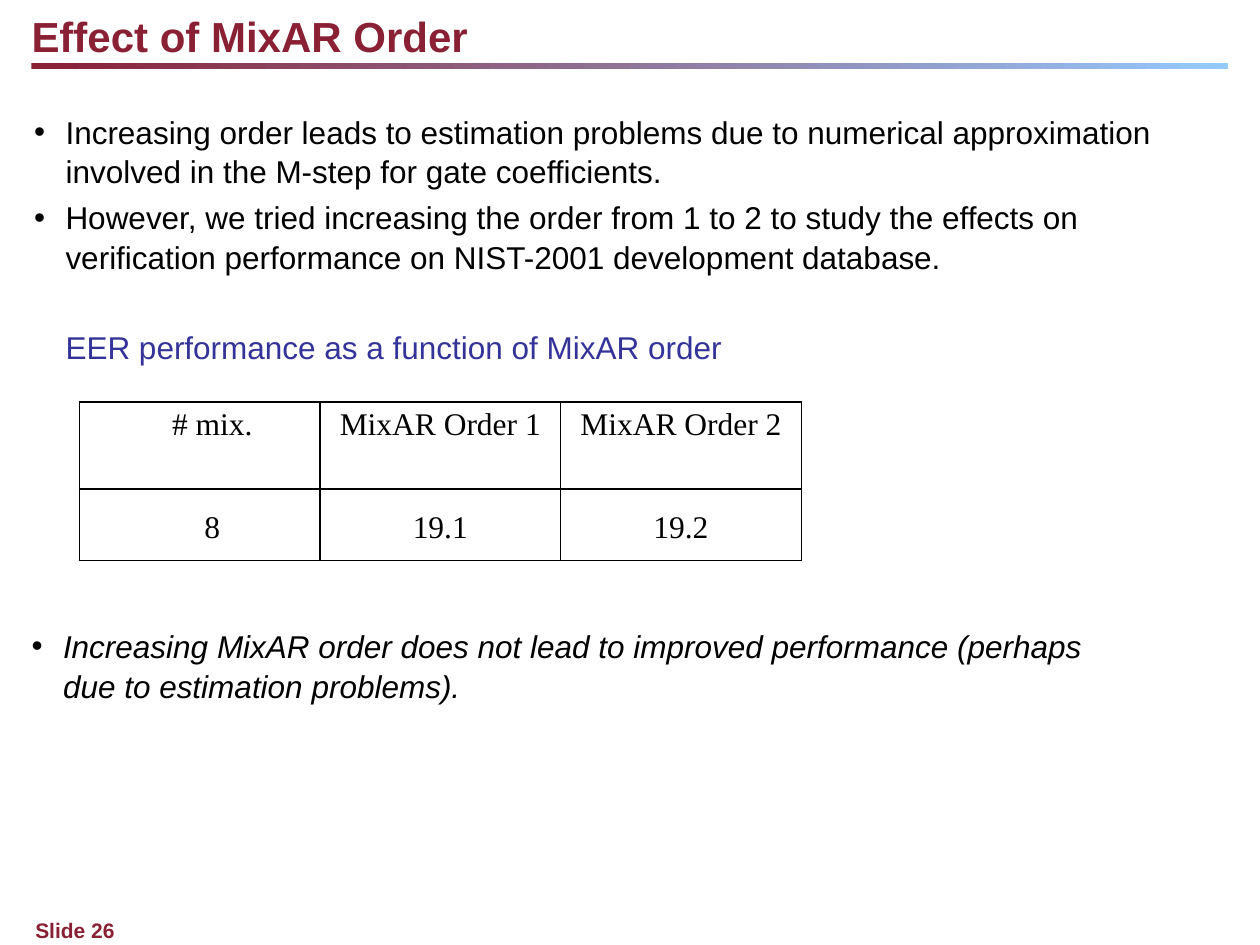
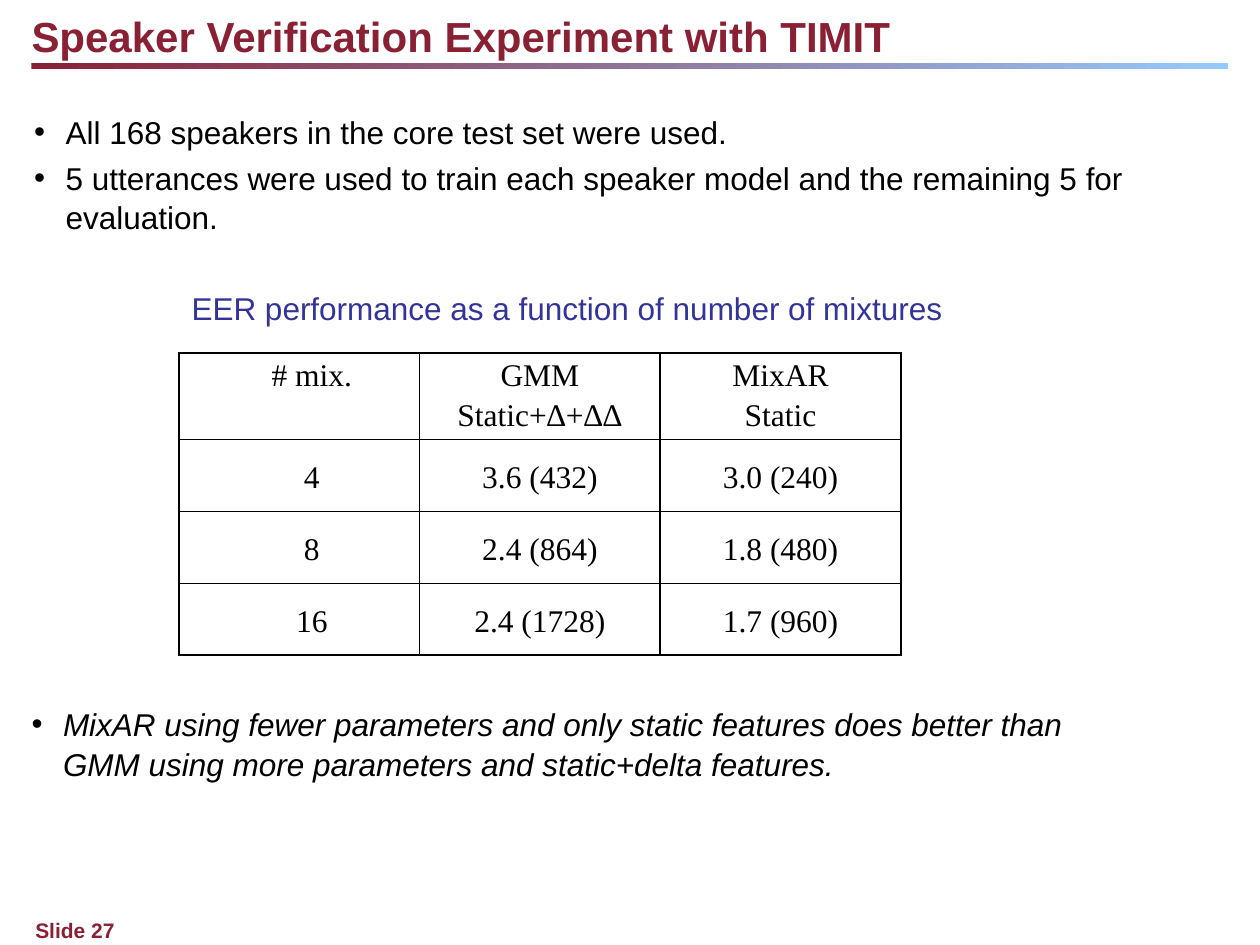
from lxml import etree
from pptx import Presentation
from pptx import util as u
from pptx.dml.color import RGBColor
from pptx.enum import shapes, text as t
from pptx.oxml import ns

MAROON, SKY, INDIGO, BLACK = "892034", "95CAFF", "333399", "000000"
SANS, SERIF = "Arial", "Times New Roman"
COLUMN_WIDTH, HEADER_HEIGHT, ROW_HEIGHT = 1.91, 0.69, 0.57
CAPTION_GAP = 28.8


def colour(hex_code):
    return RGBColor.from_string(hex_code)


def place(box, left, top, width, height):
    box.left, box.top = u.Inches(left), u.Inches(top)
    box.width, box.height = u.Inches(width), u.Inches(height)


def write(para, text, size=18, font=SANS, ink=BLACK, bold=False, italic=False,
          align=t.PP_ALIGN.LEFT, before=0, spacing=1.05, margin=0, indent=0,
          bullet=None):
    para.text = text
    para.alignment = align
    para.space_before = u.Pt(before)
    para.line_spacing = spacing
    properties = para._p.get_or_add_pPr()
    properties.set("marL", str(u.Inches(margin)))
    properties.set("indent", str(u.Inches(indent)))
    mark = etree.SubElement(properties, ns.qn("a:buChar" if bullet else "a:buNone"))
    if bullet:
        mark.set("char", bullet)
    for span in para.runs:
        span.font.name, span.font.size = font, u.Pt(size)
        span.font.bold, span.font.italic = bold, italic
        span.font.color.rgb = colour(ink)


def prepare_frame(box):
    frame = box.text_frame
    frame.word_wrap = True
    frame.auto_size = t.MSO_AUTO_SIZE.NONE
    frame.vertical_anchor = t.MSO_ANCHOR.TOP
    frame.margin_left = frame.margin_right = 0
    frame.margin_top = frame.margin_bottom = 0
    return frame


def write_bullets(box, items, italic=False):
    frame = prepare_frame(box)
    for index, item in enumerate(items):
        para = frame.add_paragraph() if index else frame.paragraphs[0]
        write(para, item, italic=italic, before=3.6 if index else 0,
              margin=0.25, indent=-0.25, bullet="•")
    return frame


def add_band(page):
    band = page.shapes.add_shape(shapes.MSO_SHAPE.RECTANGLE, u.Inches(0.25),
                                 u.Inches(0.5), u.Inches(9.5), u.Inches(0.05))
    band.shadow.inherit = False
    band.line.fill.background()
    band.fill.gradient()
    band.fill.gradient_angle = 0
    for stop, position, tint in zip(band.fill.gradient_stops, (0, 1), (MAROON, SKY)):
        stop.position = position
        stop.color.rgb = colour(tint)


def add_footer(page, number):
    box = page.shapes.add_textbox(u.Inches(0.28), u.Inches(7.27),
                                  u.Inches(8.92), u.Inches(0.2))
    write(prepare_frame(box).paragraphs[0], f"Slide {number}",
          size=12, ink=MAROON, bold=True)


def add_borders(cell):
    properties = cell._tc.get_or_add_tcPr()
    for index, side in enumerate(("a:lnL", "a:lnR", "a:lnT", "a:lnB")):
        line = etree.Element(ns.qn(side), w=str(u.Pt(1)))
        fill = etree.SubElement(line, ns.qn("a:solidFill"))
        etree.SubElement(fill, ns.qn("a:srgbClr"), val=BLACK)
        properties.insert(index, line)


def add_results_table(page, left, top, rows):
    columns = len(rows[0])
    height = HEADER_HEIGHT + ROW_HEIGHT * (len(rows) - 1)
    table = page.shapes.add_table(
        len(rows), columns, u.Inches(left), u.Inches(top),
        u.Inches(COLUMN_WIDTH * columns), u.Inches(height)).table
    table.first_row = table.horz_banding = False
    for column in table.columns:
        column.width = u.Inches(COLUMN_WIDTH)
    for r, values in enumerate(rows):
        table.rows[r].height = u.Inches(ROW_HEIGHT if r else HEADER_HEIGHT)
        for c, value in enumerate(values):
            cell = table.cell(r, c)
            cell.margin_left = cell.margin_right = u.Inches(0.07 if c else 0.03)
            cell.margin_top = cell.margin_bottom = 0
            cell.vertical_anchor = t.MSO_ANCHOR.MIDDLE if r else t.MSO_ANCHOR.TOP
            cell.fill.background()
            add_borders(cell)
            write(cell.text_frame.paragraphs[0], value, font=SERIF, spacing=1.15,
                  align=t.PP_ALIGN.CENTER, indent=0 if c else 0.2)


def add_page(deck, number, title, points, points_height, caption, caption_margin,
             table_at, rows, conclusion, conclusion_top):
    page = deck.slides.add_slide(deck.slide_layouts.get_by_name("Two Content"))
    heading, body, closing = page.placeholders
    add_band(page)
    add_footer(page, number)
    place(heading, 0.25, 0.06, 9.42, 0.4)
    write(prepare_frame(heading).paragraphs[0], title, size=24, ink=MAROON, bold=True)
    place(body, 0.27, 0.88, 9.36, points_height)
    frame = write_bullets(body, points)
    write(frame.add_paragraph(), caption, ink=INDIGO, before=CAPTION_GAP,
          margin=caption_margin)
    place(closing, 0.25, conclusion_top, 8.56, 0.6)
    write_bullets(closing, [conclusion], italic=True)
    add_results_table(page, *table_at, rows)


def main():
    deck = Presentation()
    deck.slide_width, deck.slide_height = u.Inches(10), u.Inches(7.5)
    add_page(
        deck, 26, "Effect of MixAR Order",
        points=["Increasing order leads to estimation problems due to numerical "
                "approximation involved in the M-step for gate coefficients.",
                "However, we tried increasing the order from 1 to 2 to study the "
                "effects on verification performance on NIST-2001 development "
                "database."],
        points_height=1.98,
        caption="EER performance as a function of MixAR order",
        caption_margin=0.25,
        table_at=(0.63, 3.19),
        rows=[("# mix.", "MixAR Order 1", "MixAR Order 2"),
              ("8", "19.1", "19.2")],
        conclusion="Increasing MixAR order does not lead to improved performance "
                   "(perhaps due to estimation problems).",
        conclusion_top=4.96)
    add_page(
        deck, 27, "Speaker Verification Experiment with TIMIT",
        points=["All 168 speakers in the core test set were used.",
                "5 utterances were used to train each speaker model and the "
                "remaining 5 for evaluation."],
        points_height=1.7,
        caption="EER performance as a function of number of mixtures",
        caption_margin=1.25,
        table_at=(1.42, 2.8),
        rows=[("# mix.", "GMM\vStatic+∆+∆∆", "MixAR\vStatic"),
              ("4", "3.6 (432)", "3.0 (240)"),
              ("8", "2.4 (864)", "1.8 (480)"),
              ("16", "2.4 (1728)", "1.7 (960)")],
        conclusion="MixAR using fewer parameters and only static features does "
                   "better than GMM using more parameters and static+delta features.",
        conclusion_top=5.58)
    deck.save("out.pptx")


if __name__ == "__main__":
    main()
